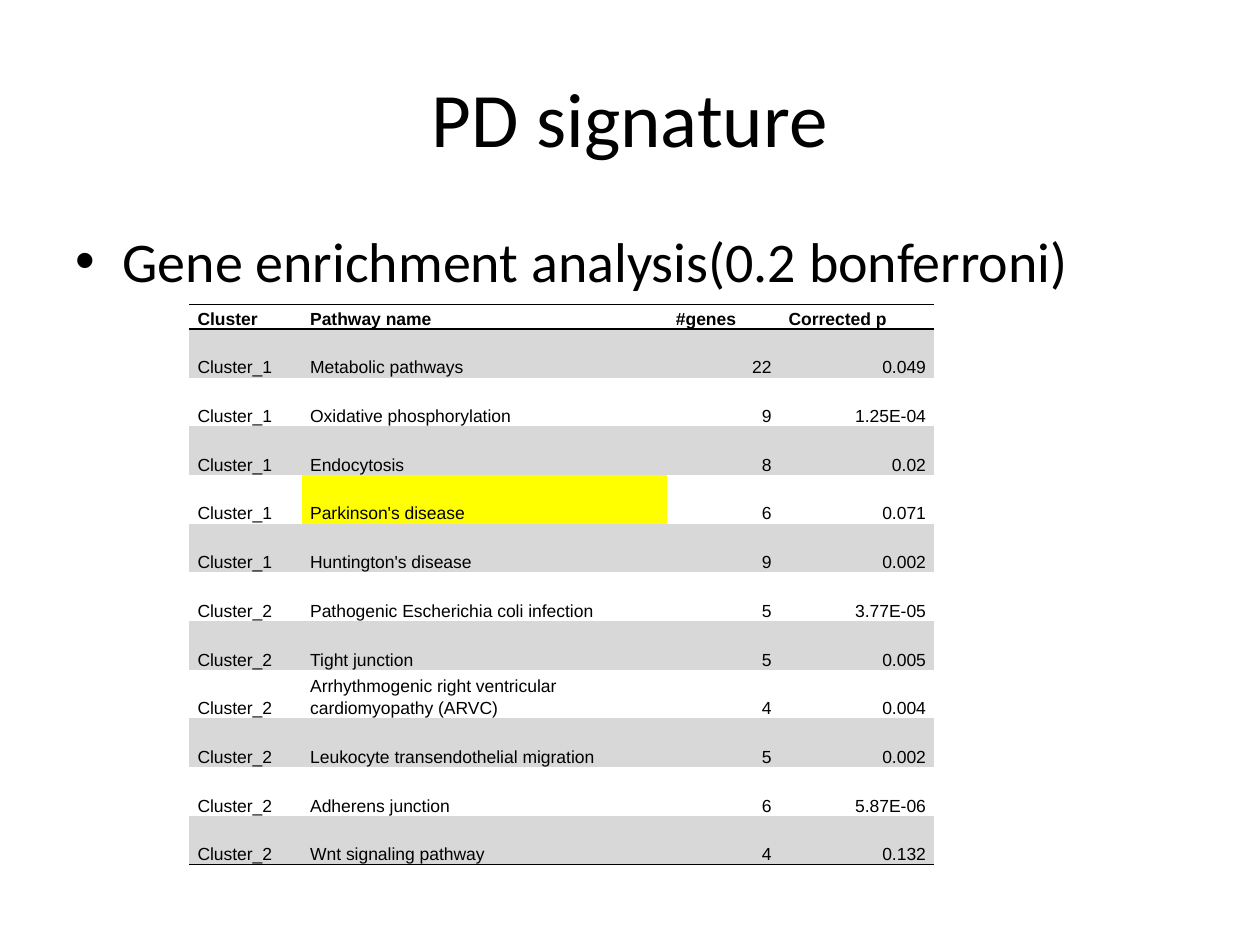
from lxml import etree
from pptx import Presentation
from pptx.dml.color import RGBColor
from pptx.enum.text import MSO_ANCHOR as Anchor, PP_ALIGN as Align
from pptx.oxml import parse_xml
from pptx.oxml.ns import nsdecls, qn
from pptx.util import Pt

BLACK = RGBColor(0, 0, 0)
GREY = RGBColor(0xD8, 0xD8, 0xD8)
YELLOW = RGBColor(0xFF, 0xFF, 0)

HEADS = ["Cluster", "Pathway name", "#genes", "Corrected p"]
PATHS = [
    ("Cluster_1", "Metabolic pathways", "22", "0.049"),
    ("Cluster_1", "Oxidative phosphorylation", "9", "1.25E-04"),
    ("Cluster_1", "Endocytosis", "8", "0.02"),
    ("Cluster_1", "Parkinson's disease", "6", "0.071"),
    ("Cluster_1", "Huntington's disease", "9", "0.002"),
    ("Cluster_2", "Pathogenic Escherichia coli infection", "5", "3.77E-05"),
    ("Cluster_2", "Tight junction", "5", "0.005"),
    ("Cluster_2", "Arrhythmogenic right ventricular cardiomyopathy (ARVC)", "4", "0.004"),
    ("Cluster_2", "Leukocyte transendothelial migration", "5", "0.002"),
    ("Cluster_2", "Adherens junction", "6", "5.87E-06"),
    ("Cluster_2", "Wnt signaling pathway", "4", "0.132"),
]
WIDTHS = [64.4, 209, 64.4, 88.2]
HEAD_H, ROW_H = 13.9, 27.85


def add_text(slide, box, text, size, anchor):
    frame = slide.shapes.add_textbox(*map(Pt, box)).text_frame
    frame.word_wrap = True
    frame.vertical_anchor = anchor
    para = frame.paragraphs[0]
    para.text = text
    para.font.name, para.font.size = "Calibri", Pt(size)
    para.font.color.rgb = BLACK
    return para


def set_edges(cell, sides):
    """Rule the named sides (T, B) in black and clear the others."""
    props = cell._tc.get_or_add_tcPr()
    for side in "LRTB":
        fill = f'<a:solidFill><a:srgbClr val="{BLACK}"/></a:solidFill>'
        if side not in sides:
            fill = "<a:noFill/>"
        props.append(parse_xml(
            f'<a:ln{side} w="{Pt(1)}" {nsdecls("a")}>{fill}</a:ln{side}>'))


prs = Presentation()
prs.slide_width, prs.slide_height = Pt(720), Pt(540)
slide = prs.slides.add_slide(prs.slide_layouts[6])

title = add_text(slide, (36, 21.6, 648, 90), "PD signature", 44, Anchor.MIDDLE)
title.alignment = Align.CENTER

point = add_text(slide, (36, 126, 648, 356.4),
                 "Gene enrichment analysis(0.2 bonferroni)", 32, Anchor.TOP)
point.space_before = Pt(6.4)
props = point._p.get_or_add_pPr()
props.set("marL", str(Pt(27)))
props.set("indent", str(Pt(-27)))
etree.SubElement(props, qn("a:buFont")).set("typeface", "Arial")
etree.SubElement(props, qn("a:buChar")).set("char", "•")

rows = [HEADS, *PATHS]
last = len(rows) - 1
table = slide.shapes.add_table(
    len(rows), len(HEADS), Pt(108), Pt(174), Pt(sum(WIDTHS)),
    Pt(HEAD_H + ROW_H * last)).table
table.first_row = table.horz_banding = False
for col, width in zip(table.columns, WIDTHS):
    col.width = Pt(width)

for i, row in enumerate(rows):
    table.rows[i].height = Pt(ROW_H if i else HEAD_H)
    edges = {0: "TB", 1: "T", last: "B"}.get(i, "")
    for j, text in enumerate(row):
        cell = table.cell(i, j)
        cell.margin_left = cell.margin_right = Pt(4.9)
        cell.margin_top = cell.margin_bottom = 0
        cell.vertical_anchor = Anchor.BOTTOM
        set_edges(cell, edges)
        if text == "Parkinson's disease":
            cell.fill.solid()
            cell.fill.fore_color.rgb = YELLOW
        elif i % 2:
            cell.fill.solid()
            cell.fill.fore_color.rgb = GREY
        else:
            cell.fill.background()
        para = cell.text_frame.paragraphs[0]
        para.text = text
        para.line_spacing = 1.15
        para.alignment = Align.RIGHT if i and j > 1 else Align.LEFT
        para.font.name, para.font.size = "Arial", Pt(10)
        para.font.bold = i == 0
        para.font.color.rgb = BLACK

prs.save("out.pptx")
